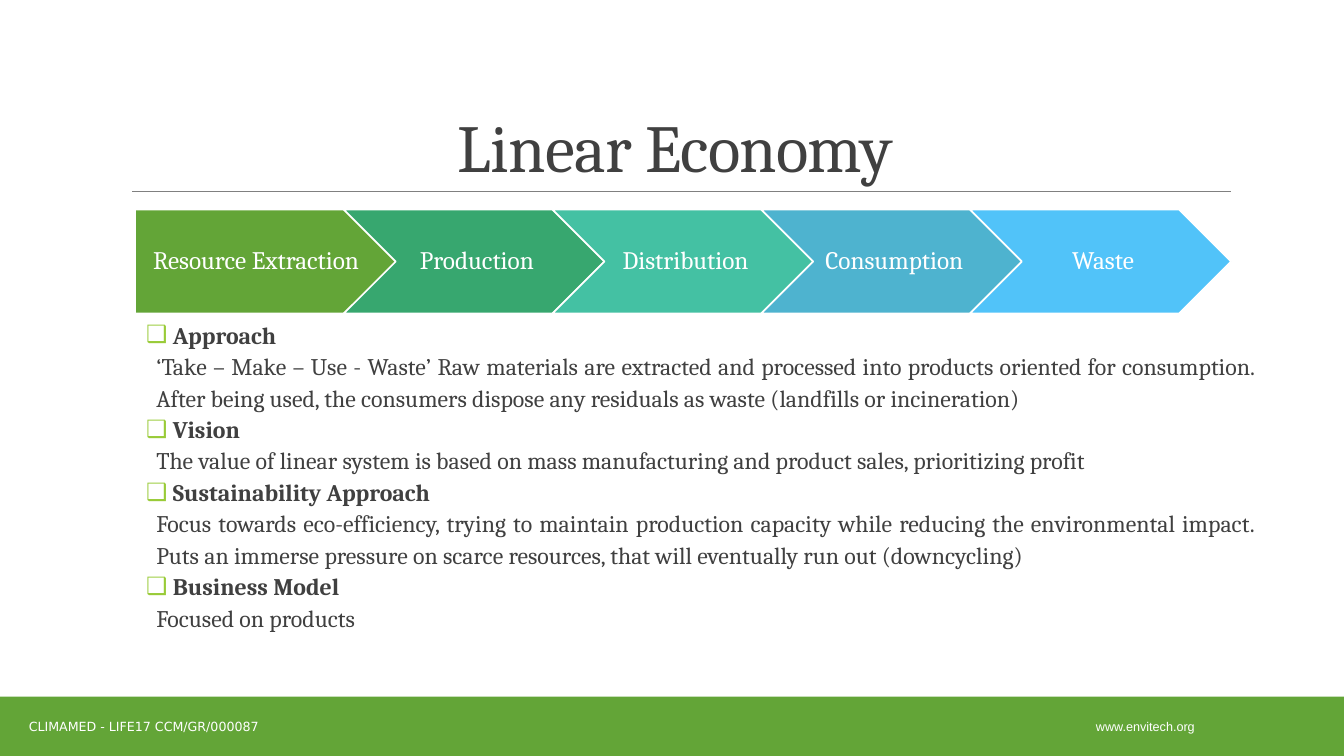
from lxml import etree
from pptx import Presentation
from pptx.dml.color import RGBColor
from pptx.enum.shapes import MSO_CONNECTOR, MSO_SHAPE
from pptx.enum.text import MSO_ANCHOR, MSO_AUTO_SIZE, PP_ALIGN
from pptx.oxml.ns import qn
from pptx.util import Inches, Pt

CENTER, JUSTIFY = PP_ALIGN.CENTER, PP_ALIGN.JUSTIFY
TOP, MIDDLE, BOTTOM = MSO_ANCHOR.TOP, MSO_ANCHOR.MIDDLE, MSO_ANCHOR.BOTTOM
RECT, PENTAGON, CHEVRON = MSO_SHAPE.RECTANGLE, MSO_SHAPE.PENTAGON, MSO_SHAPE.CHEVRON

WHITE = RGBColor(0xFF, 0xFF, 0xFF)
DARK = RGBColor(0x40, 0x40, 0x40)
GRAY = RGBColor(0x80, 0x80, 0x80)
GREEN = RGBColor(0x63, 0xA5, 0x37)
LIME = RGBColor(0x99, 0xCB, 0x38)

TITLE = "Linear Economy"
STAGES = [
    ("Resource Extraction", GREEN),
    ("Production", RGBColor(0x37, 0xA7, 0x6F)),
    ("Distribution", RGBColor(0x44, 0xC1, 0xA3)),
    ("Consumption", RGBColor(0x4E, 0xB3, 0xCF)),
    ("Waste", RGBColor(0x51, 0xC3, 0xF9)),
]
TOPICS = [
    ("Approach",
     "‘Take – Make – Use - Waste’ Raw materials are extracted and processed into "
     "products oriented for consumption. After being used, the consumers dispose "
     "any residuals as waste (landfills or incineration)"),
    ("Vision",
     "The value of linear system is based on mass manufacturing and product sales, "
     "prioritizing profit"),
    ("Sustainability Approach",
     "Focus towards eco-efficiency, trying to maintain production capacity while "
     "reducing the environmental impact. Puts an immerse pressure on scarce "
     "resources, that will eventually run out (downcycling)"),
    ("Business Model", "Focused on products"),
]
FOOTERS = [  # text, font, left, width
    ("www.envitech.org", "Arial", 10.13, 2.46),
    ("CLIMAMED - LIFE17 CCM/GR/000087", "DejaVu Sans", -0.16, 3.17),
]
STAGE_LEFT, STAGE_TOP, STAGE_W, STAGE_H, STAGE_STEP = 1.34, 2.08, 2.59, 1.03, 2.07


def place(shape, left, top, width, height):
    shape.left, shape.top = Inches(left), Inches(top)
    shape.width, shape.height = Inches(width), Inches(height)


def set_frame(tf, anchor, insets=(0.1, 0.05, 0.1, 0.05)):
    tf.word_wrap = True
    tf.auto_size = MSO_AUTO_SIZE.NONE
    tf.vertical_anchor = anchor
    tf.margin_left, tf.margin_top, tf.margin_right, tf.margin_bottom = map(Inches, insets)


def write(p, text, size, font="Cambria", color=WHITE, bold=False, align=CENTER, spacing=1.0):
    p.alignment = align
    p.line_spacing = spacing
    p.space_before = p.space_after = Pt(0)
    r = p.add_run()
    r.text = text
    r.font.size, r.font.name, r.font.bold = Pt(size), font, bold
    r.font.color.rgb = color
    return r


def set_bullet(p, char=None):
    """Indent the paragraph by 0.1 inch, with a hanging lime bullet if char is given."""
    pPr = p._p.get_or_add_pPr()
    pPr.set("marL", str(Inches(0.1)))
    pPr.set("indent", str(-Inches(0.1) if char else 0))
    if char:
        color = etree.SubElement(pPr, qn("a:buClr"))
        etree.SubElement(color, qn("a:srgbClr")).set("val", str(LIME))
        etree.SubElement(pPr, qn("a:buChar")).set("char", char)
    else:
        etree.SubElement(pPr, qn("a:buNone"))


def add_block(s, kind, box, fill):
    shape = s.shapes.add_shape(kind, *map(Inches, box))
    shape.shadow.inherit = False
    shape.fill.solid()
    shape.fill.fore_color.rgb = fill
    shape.line.fill.background()
    return shape


def main():
    prs = Presentation()
    prs.slide_width, prs.slide_height = Inches(13.33), Inches(7.5)
    s = prs.slides.add_slide(prs.slide_layouts[1])

    rule = s.shapes.add_connector(
        MSO_CONNECTOR.STRAIGHT, Inches(1.31), Inches(1.9), Inches(12.21), Inches(1.9))
    rule.line.color.rgb = GRAY
    rule.line.width = Pt(0.5)
    etree.SubElement(rule._element.spPr, qn("a:effectLst"))

    add_block(s, RECT, (0, 6.91, 13.33, 0.59), GREEN)
    for text, font, left, width in FOOTERS:
        tf = s.shapes.add_textbox(*map(Inches, (left, 7.01, width, 0.4))).text_frame
        set_frame(tf, MIDDLE)
        write(tf.paragraphs[0], text, 9, font=font)

    title = s.shapes.title
    place(title, 1.2, 0.31, 11, 1.59)
    set_frame(title.text_frame, BOTTOM)
    r = write(title.text_frame.paragraphs[0], TITLE, 48, color=DARK, spacing=0.85)
    r.font._element.set("spc", "-50")

    body = s.placeholders[1]
    place(body, 1.45, 3.1, 11, 3.67)
    tf = body.text_frame
    set_frame(tf, TOP, (0, 0.05, 0, 0.05))
    for i, (heading, detail) in enumerate(TOPICS):
        p = tf.add_paragraph() if i else tf.paragraphs[0]
        set_bullet(p, "❑")
        write(p, " " + heading, 17, color=DARK, bold=True, align=JUSTIFY, spacing=1.1)
        p = tf.add_paragraph()
        set_bullet(p)
        write(p, detail, 17, color=DARK, align=JUSTIFY, spacing=1.1)

    for i, (name, color) in enumerate(STAGES):
        box = (STAGE_LEFT + i * STAGE_STEP, STAGE_TOP, STAGE_W, STAGE_H)
        stage = add_block(s, CHEVRON if i else PENTAGON, box, color)
        stage.line.color.rgb = WHITE
        stage.line.width = Pt(1.25)
        set_frame(stage.text_frame, MIDDLE, (0.08 if i else 0.1, 0.05, 0.03, 0.05))
        write(stage.text_frame.paragraphs[0], name, 18, spacing=0.9)

    prs.save("out.pptx")


if __name__ == "__main__":
    main()
